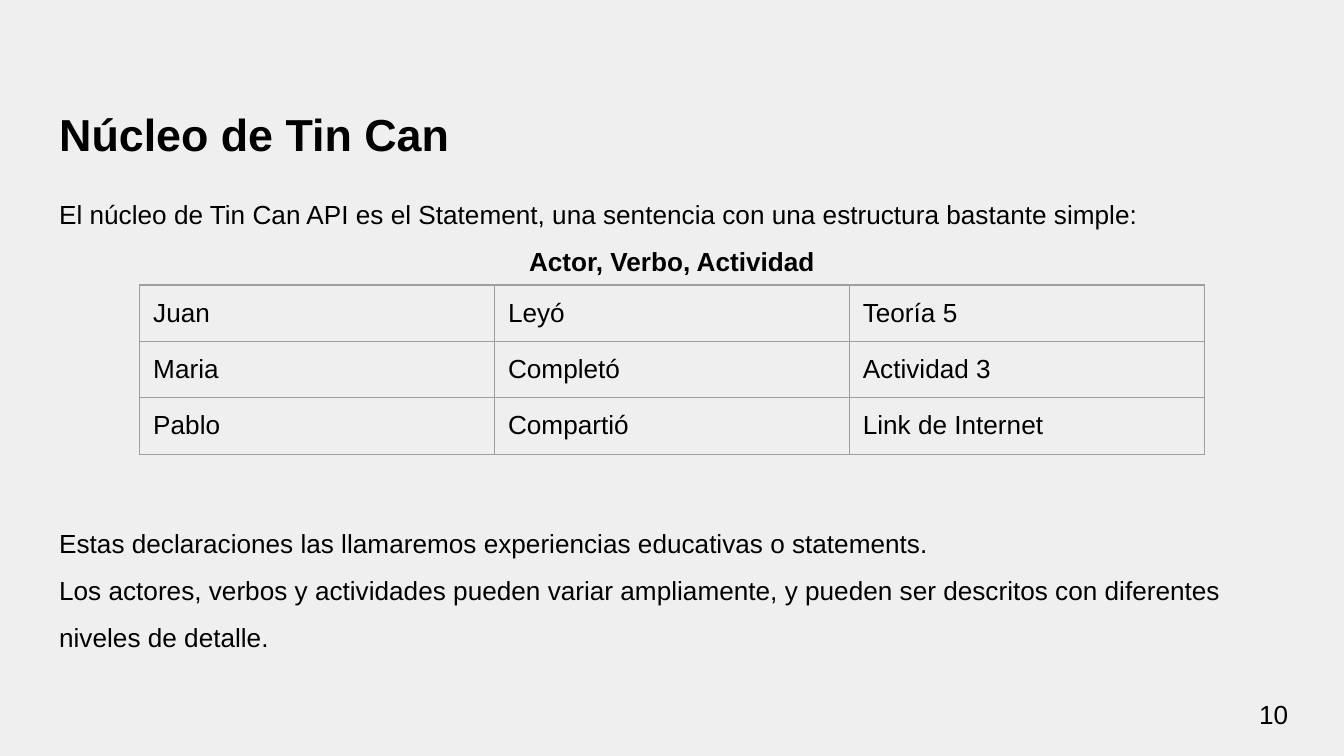
from dataclasses import dataclass

from lxml import etree
from pptx import Presentation
from pptx.dml.color import RGBColor
from pptx.enum.text import MSO_ANCHOR, MSO_AUTO_SIZE, PP_ALIGN
from pptx.oxml.ns import qn
from pptx.util import Inches, Pt


@dataclass(frozen=True)
class Theme:
    font: str = "Arial"
    background: RGBColor = RGBColor(0xEF, 0xEF, 0xEF)
    ink: RGBColor = RGBColor(0, 0, 0)
    grid: str = "9E9E9E"
    grid_width: int = Pt(0.75)
    title_size: int = Pt(24)
    text_size: int = Pt(14)
    inset: int = Inches(0.1)
    line_spacing: float = 1.5


THEME = Theme()

INTRO = "El núcleo de Tin Can API es el Statement, una sentencia con una estructura bastante simple:"
STRUCTURE = "Actor, Verbo, Actividad"
CLOSING = [
    "Estas declaraciones las llamaremos experiencias educativas o statements.",
    "Los actores, verbos y actividades pueden variar ampliamente, "
    "y pueden ser descritos con diferentes niveles de detalle.",
]
STATEMENTS = [
    ["Juan", "Leyó", "Teoría 5"],
    ["Maria", "Completó", "Actividad 3"],
    ["Pablo", "Compartió", "Link de Internet"],
]
TABLE_GAP = Pt(126)


def style_paragraph(paragraph, text, size=THEME.text_size, bold=False):
    paragraph.text = text
    font = paragraph.font
    font.name, font.size, font.bold = THEME.font, size, bold
    font.color.rgb = THEME.ink


def set_insets(holder):
    """Give a text frame or table cell the same margin on every side."""
    holder.margin_left = holder.margin_right = THEME.inset
    holder.margin_top = holder.margin_bottom = THEME.inset


def place(shape, left, top, width, height, anchor=MSO_ANCHOR.TOP):
    """Position a text shape and return its prepared text frame."""
    shape.left, shape.top = Inches(left), Inches(top)
    shape.width, shape.height = Inches(width), Inches(height)
    frame = shape.text_frame
    frame.word_wrap = True
    frame.auto_size = MSO_AUTO_SIZE.NONE
    frame.vertical_anchor = anchor
    set_insets(frame)
    return frame


def remove_bullet(paragraph):
    properties = paragraph._p.get_or_add_pPr()
    properties.set("marL", "0")
    properties.set("indent", "0")
    bullet = etree.Element(qn("a:buNone"))
    properties.find(qn("a:defRPr")).addprevious(bullet)


def fill_title(title):
    heading = place(title, 0.34, 0.49, 9.32, 0.63).paragraphs[0]
    style_paragraph(heading, "Núcleo de Tin Can", THEME.title_size, bold=True)
    heading.alignment = PP_ALIGN.LEFT
    heading.line_spacing = THEME.line_spacing


def fill_body(body):
    frame = place(body, 0.34, 1.26, 9.32, 3.74)
    for index, text in enumerate([INTRO, STRUCTURE, *CLOSING]):
        paragraph = frame.add_paragraph() if index else frame.paragraphs[0]
        is_structure = text == STRUCTURE
        style_paragraph(paragraph, text, bold=is_structure)
        paragraph.alignment = PP_ALIGN.CENTER if is_structure else PP_ALIGN.LEFT
        paragraph.line_spacing = THEME.line_spacing
        paragraph.space_before = TABLE_GAP if text == CLOSING[0] else Pt(0)
        remove_bullet(paragraph)


def draw_borders(cell):
    properties = cell._tc.get_or_add_tcPr()
    for position, side in enumerate(("lnL", "lnR", "lnT", "lnB")):
        line = etree.Element(qn(f"a:{side}"), w=str(THEME.grid_width))
        fill = etree.SubElement(line, qn("a:solidFill"))
        etree.SubElement(fill, qn("a:srgbClr"), val=THEME.grid)
        properties.insert(position, line)


def add_statement_table(slide):
    rows, columns = len(STATEMENTS), len(STATEMENTS[0])
    table = slide.shapes.add_table(
        rows, columns, Inches(1.04), Inches(2.12),
        Inches(2.64 * columns), Inches(0.42 * rows),
    ).table
    table.first_row = table.horz_banding = False
    for row, statement in zip(table.rows, STATEMENTS):
        for cell, part in zip(row.cells, statement):
            style_paragraph(cell.text_frame.paragraphs[0], part)
            set_insets(cell)
            cell.fill.background()
            draw_borders(cell)


def add_page_number(slide, number):
    box = slide.shapes.add_textbox(0, 0, 0, 0)
    frame = place(box, 9.27, 5.1, 0.6, 0.43, MSO_ANCHOR.MIDDLE)
    style_paragraph(frame.paragraphs[0], str(number))


def main():
    deck = Presentation()
    deck.slide_width = Inches(10)
    deck.slide_height = Inches(10 * 9 / 16)
    slide = deck.slides.add_slide(deck.slide_layouts.get_by_name("Title and Content"))
    slide.background.fill.solid()
    slide.background.fill.fore_color.rgb = THEME.background
    fill_title(slide.shapes.title)
    fill_body(slide.placeholders[1])
    add_page_number(slide, 10)
    add_statement_table(slide)
    deck.save("out.pptx")


if __name__ == "__main__":
    main()
